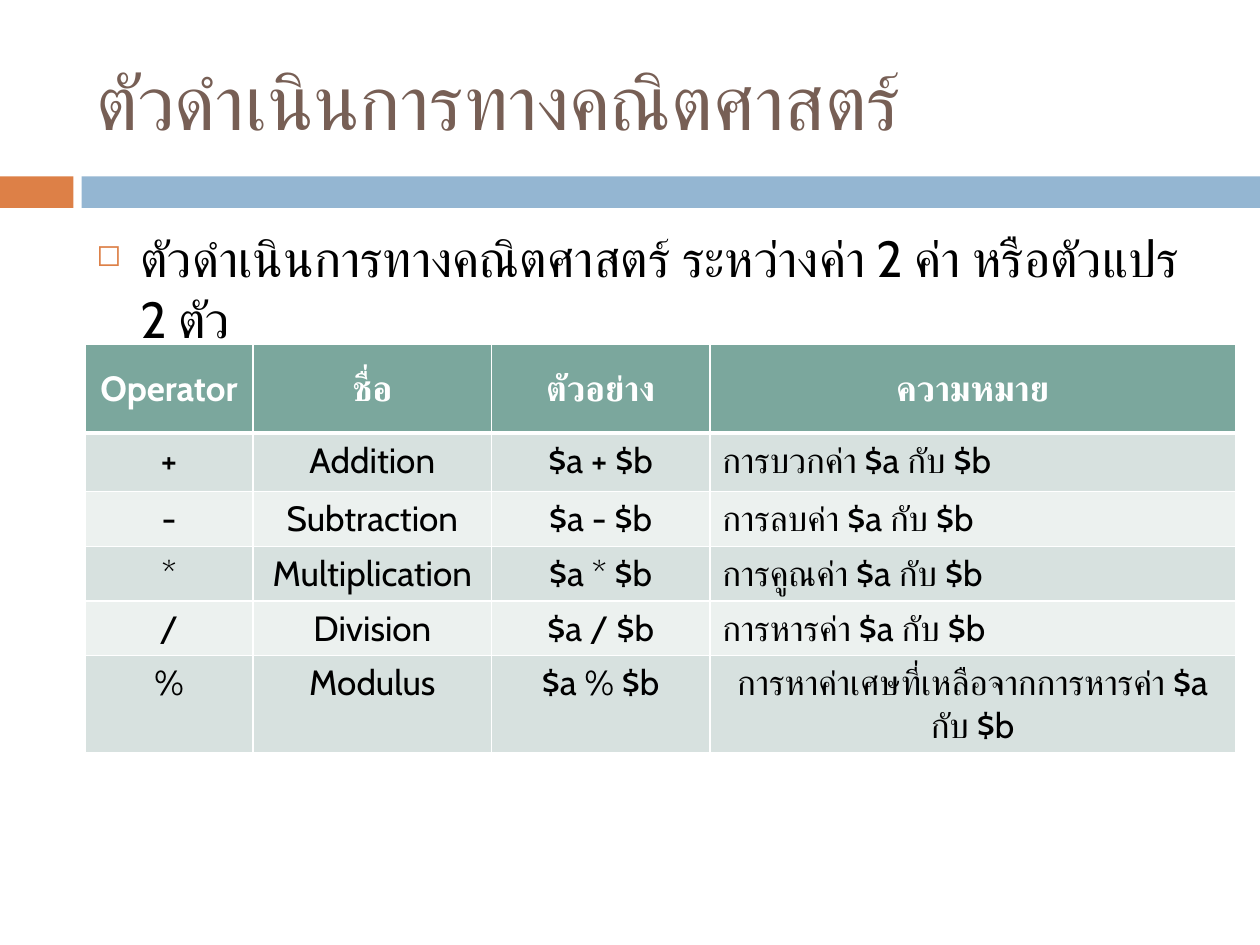
from pptx import Presentation
from pptx.dml.color import RGBColor
from pptx.enum.shapes import MSO_SHAPE
from pptx.enum.text import MSO_ANCHOR, PP_ALIGN
from pptx.oxml.ns import qn
from pptx.util import Pt
from lxml.etree import SubElement

# Content
TITLE = "ตัวดำเนินการทางคณิตศาสตร์"
BULLET = "ตัวดำเนินการทางคณิตศาสตร์ ระหว่างค่า 2 ค่า หรือตัวแปร 2 ตัว"
HEADER = ("Operator", "ชื่อ", "ตัวอย่าง", "ความหมาย")
OPERATORS = [
    ("+", "Addition", "การบวกค่า $a กับ $b"),
    ("-", "Subtraction", "การลบค่า $a กับ $b"),
    ("*", "Multiplication", "การคูณค่า $a กับ $b"),
    ("/", "Division", "การหารค่า $a กับ $b"),
    ("%", "Modulus", "การหาค่าเศษที่เหลือจากการหารค่า $a กับ $b"),
]

# Style
FONT = "Cabin"
BLACK = RGBColor(0x00, 0x00, 0x00)
WHITE = RGBColor(0xFF, 0xFF, 0xFF)
BROWN = RGBColor(0x77, 0x5F, 0x55)
ORANGE = RGBColor(0xDD, 0x80, 0x47)
BLUE = RGBColor(0x94, 0xB6, 0xD2)
GREEN = RGBColor(0x7B, 0xA7, 0x9D)
BANDS = (RGBColor(0xD7, 0xE1, 0xDF), RGBColor(0xEC, 0xF1, 0xEF))

# Layout in points
WIDTH, HEIGHT = 720, 540
LEFT, TEXT_WIDTH = 48, 642
BAND_TOP, BAND_HEIGHT = 100.8, 18
BAND_SPANS = [(0, 42, ORANGE), (46.6, WIDTH - 46.6, BLUE)]
TABLE_TOP = 196.6
COLUMN_WIDTHS = (96.2, 136.2, 124.8, 300.3)
ROW_HEIGHTS = (50.8, 33.6, 29.2, 29.2, 29.2, 29.2)
INDENT = 25.2


def add_run(paragraph, text, size, color, bold=False):
    run = paragraph.add_run()
    run.text = text
    run.font.name = FONT
    run.font.size = Pt(size)
    run.font.bold = bold
    run.font.color.rgb = color
    SubElement(run.font._element, qn("a:cs"), typeface=FONT)


def add_text(slide, top, height, text, size, color, anchor):
    box = slide.shapes.add_textbox(Pt(LEFT), Pt(top), Pt(TEXT_WIDTH), Pt(height))
    box.text_frame.word_wrap = True
    box.text_frame.vertical_anchor = anchor
    paragraph = box.text_frame.paragraphs[0]
    add_run(paragraph, text, size, color)
    return paragraph


def set_bullet(paragraph):
    properties = paragraph._p.get_or_add_pPr()
    properties.set("marL", str(Pt(INDENT)))
    properties.set("indent", str(-Pt(INDENT)))
    color = SubElement(properties, qn("a:buClr"))
    SubElement(color, qn("a:srgbClr"), val=str(ORANGE))
    SubElement(properties, qn("a:buSzPct"), val="60000")
    SubElement(properties, qn("a:buChar"), char="◻")


def set_borders(cell, bottom_width):
    properties = cell._tc.get_or_add_tcPr()
    widths = {"a:lnL": 1, "a:lnR": 1, "a:lnT": 1, "a:lnB": bottom_width}
    for position, (side, width) in enumerate(widths.items()):
        line = SubElement(properties, qn(side), w=str(Pt(width)))
        fill = SubElement(line, qn("a:solidFill"))
        SubElement(fill, qn("a:srgbClr"), val=str(WHITE))
        properties.insert(position, line)  # borders precede the fill


def add_operator_table(slide):
    rows = [HEADER] + [(sign, name, f"$a {sign} $b", meaning)
                       for sign, name, meaning in OPERATORS]
    table = slide.shapes.add_table(
        len(rows), len(HEADER), Pt(LEFT + 0.5), Pt(TABLE_TOP),
        Pt(sum(COLUMN_WIDTHS)), Pt(sum(ROW_HEIGHTS))).table
    for column, width in zip(table.columns, COLUMN_WIDTHS):
        column.width = Pt(width)
    for row, height in zip(table.rows, ROW_HEIGHTS):
        row.height = Pt(height)

    for r, row in enumerate(rows):
        is_header = r == 0
        for c, text in enumerate(row):
            cell = table.cell(r, c)
            cell.fill.solid()
            cell.fill.fore_color.rgb = GREEN if is_header else BANDS[(r - 1) % 2]
            cell.vertical_anchor = MSO_ANCHOR.MIDDLE if is_header else MSO_ANCHOR.TOP
            set_borders(cell, 3 if is_header else 1)
            paragraph = cell.text_frame.paragraphs[0]
            # Meanings read from the left, except in the last row
            is_meaning = c == 3 and 0 < r < len(rows) - 1
            paragraph.alignment = PP_ALIGN.LEFT if is_meaning else PP_ALIGN.CENTER
            add_run(paragraph, text, 20, WHITE if is_header else BLACK, is_header)


def main():
    deck = Presentation()
    deck.slide_width, deck.slide_height = Pt(WIDTH), Pt(HEIGHT)
    slide = deck.slides.add_slide(deck.slide_layouts[6])

    # Coloured band under the title
    for left, width, color in BAND_SPANS:
        band = slide.shapes.add_shape(
            MSO_SHAPE.RECTANGLE, Pt(left), Pt(BAND_TOP), Pt(width), Pt(BAND_HEIGHT))
        band.shadow.inherit = False
        band.fill.solid()
        band.fill.fore_color.rgb = color
        band.line.fill.background()

    # Title and bullet
    add_text(slide, 18, 78, TITLE, 44, BROWN, MSO_ANCHOR.MIDDLE)
    bullet = add_text(slide, 126, 354, BULLET, 29, BLACK, MSO_ANCHOR.TOP)
    bullet.space_before = Pt(7)
    set_bullet(bullet)

    add_operator_table(slide)
    deck.save("out.pptx")


if __name__ == "__main__":
    main()
